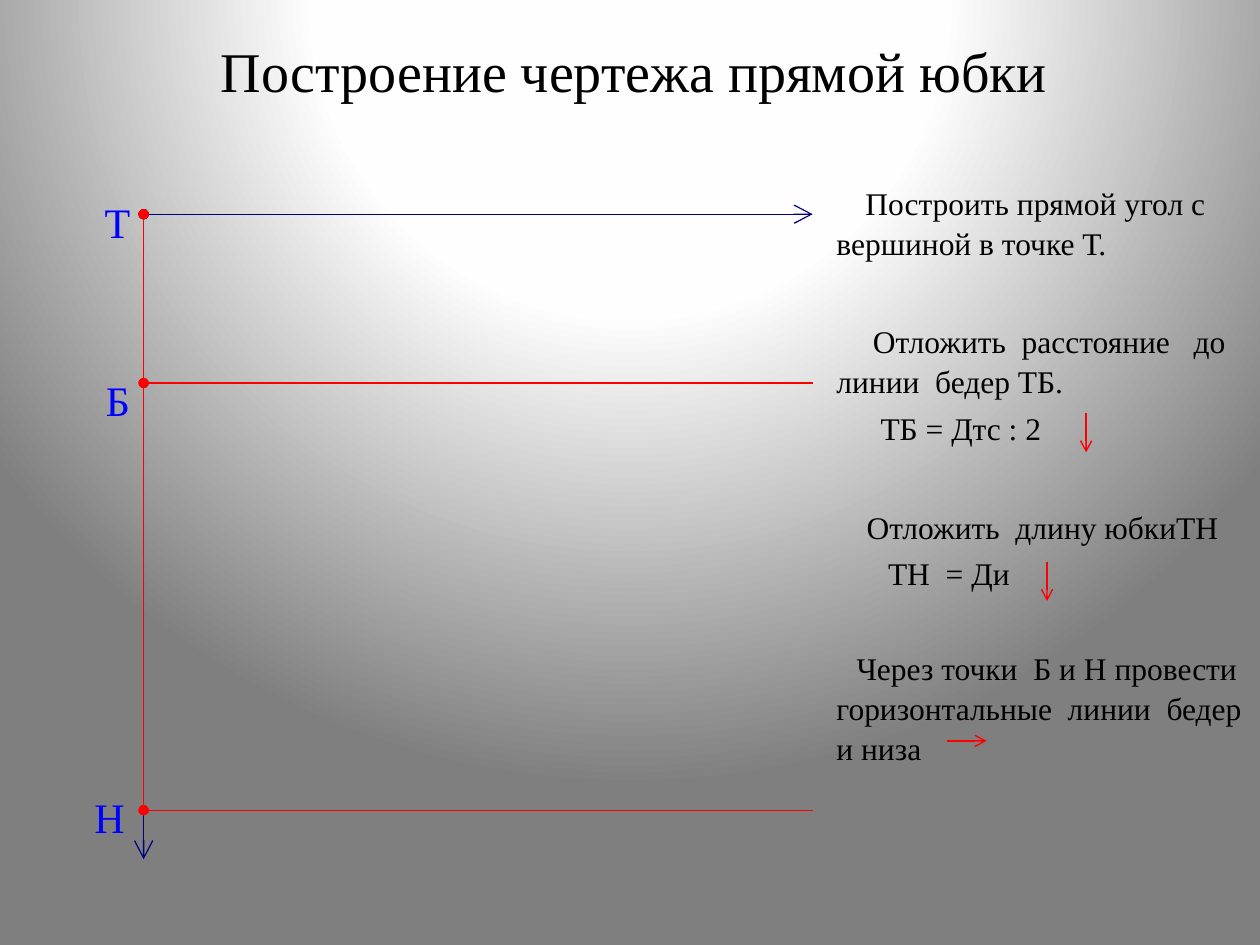
from lxml import etree
from pptx import Presentation
from pptx.dml.color import RGBColor
from pptx.enum.shapes import MSO_CONNECTOR
from pptx.enum.text import MSO_ANCHOR, PP_ALIGN
from pptx.oxml.ns import qn
from pptx.util import Inches, Pt

STRAIGHT = MSO_CONNECTOR.STRAIGHT
MIDDLE, TOP = MSO_ANCHOR.MIDDLE, MSO_ANCHOR.TOP
CENTER, LEFT = PP_ALIGN.CENTER, PP_ALIGN.LEFT

FONT = "Times New Roman"
BLACK, BLUE, NAVY, RED = "000000", "0000FF", "000080", "FF0000"
SLIDE_WIDTH, SLIDE_HEIGHT = Inches(10), Inches(7.5)
COLUMNS, ROWS = 100, 75

AXIS, RIGHT_END = 11.4, 64.5
WAIST, HIPS, HEM, AXIS_END = 17, 30.4, 64.3, 68.2
STEPS_LEFT = 63.4
ARROW_LENGTH = 3.1

FIRST_STEP = [("Построить прямой угол с вершиной в точке Т.", 0.23, 0)]
NEXT_STEPS = [
    ("Отложить  расстояние   до линии  бедер ТБ.", 0.29, 0),
    ("ТБ = Дтс : 2", 0.35, 3.6),
    ("Отложить  длину юбкиТН", 0.24, 34),
    ("ТН  = Ди", 0.41, 3.6),
    ("Через точки  Б и Н провести горизонтальные  линии  бедер и низа", 0.16, 31),
]


def column(count):
    return round(SLIDE_WIDTH * count / COLUMNS)


def row(count):
    return round(SLIDE_HEIGHT * count / ROWS)


def color(value):
    return RGBColor.from_string(value)


def paint_background(slide):
    fill = slide.background.fill
    fill.gradient()
    gradient = next(slide.element.iter(qn("a:gradFill")))
    for child in list(gradient):
        gradient.remove(child)
    stops = etree.SubElement(gradient, qn("a:gsLst"))
    for position, value in ((0, "FFFFFF"), (40, "FEFEFE"), (100, "7F7F7F")):
        stop = etree.SubElement(stops, qn("a:gs"), pos=str(position * 1000))
        etree.SubElement(stop, qn("a:srgbClr"), val=value)
    circle = etree.SubElement(gradient, qn("a:path"), {"path": "circle"})
    etree.SubElement(circle, qn("a:fillToRect"),
                     l="50000", t="-80000", r="50000", b="180000")


def add_text_box(slide, left, top, width, height, anchor=TOP, wrap=True):
    shape = slide.shapes.add_textbox(column(left), row(top), column(width), row(height))
    frame = shape.text_frame
    frame.word_wrap = wrap
    frame.vertical_anchor = anchor
    return frame


def add_run(paragraph, text, size, value, alignment=LEFT):
    paragraph.alignment = alignment
    run = paragraph.add_run()
    run.text = text
    run.font.name = FONT
    run.font.size = Pt(size)
    run.font.color.rgb = color(value)


def add_title(slide, text):
    frame = add_text_box(slide, 13, 0, 74.7, 11.1, MIDDLE)
    add_run(frame.paragraphs[0], text, 32, BLACK, CENTER)


def add_steps(slide, steps, top, width, height):
    frame = add_text_box(slide, STEPS_LEFT, top, width, height)
    for index, (text, indent, space) in enumerate(steps):
        paragraph = frame.paragraphs[0] if index == 0 else frame.add_paragraph()
        paragraph.space_before = Pt(space)
        paragraph.line_spacing = 1.06
        properties = paragraph._p.get_or_add_pPr()
        properties.set("marL", str(Inches(0.2)))
        properties.set("indent", str(Inches(indent)))
        add_run(paragraph, text, 18, BLACK)


def add_point_label(slide, text, left, top, width):
    frame = add_text_box(slide, left, top, width, 3.8, wrap=False)
    frame.margin_left = frame.margin_right = frame.margin_bottom = 0
    frame.margin_top = Inches(0.09)
    add_run(frame.paragraphs[0], text, 24, BLUE, CENTER)


def add_line(slide, start, end, value, head=None, tail=None, size="med", weight=0.75):
    connector = slide.shapes.add_connector(
        STRAIGHT, column(start[0]), row(start[1]), column(end[0]), row(end[1]))
    connector.line.color.rgb = color(value)
    connector.line.width = Pt(weight)
    outline = connector.line._get_or_add_ln()
    if head:
        etree.SubElement(outline, qn("a:headEnd"), type=head)
    if tail:
        etree.SubElement(outline, qn("a:tailEnd"), type=tail, w=size, len=size)
    etree.SubElement(connector._element.spPr, qn("a:effectLst"))


def add_step_arrow(slide, left, top, across=0, down=0):
    add_line(slide, (left, top), (left + across, top + down), RED,
             tail="arrow", weight=0.79)


def main():
    presentation = Presentation()
    presentation.slide_width, presentation.slide_height = SLIDE_WIDTH, SLIDE_HEIGHT
    slide = presentation.slides.add_slide(presentation.slide_layouts[6])
    paint_background(slide)
    add_title(slide, "Построение чертежа прямой юбки")
    add_steps(slide, NEXT_STEPS, 24.9, 36.6, 46.9)

    corner = (AXIS, WAIST)
    for end in ((AXIS, AXIS_END), (RIGHT_END, WAIST)):
        add_line(slide, corner, end, NAVY, "oval", "arrow", "lg")
    for level in (HIPS, HEM):
        add_line(slide, corner, (AXIS, level), RED, "oval", "oval")
        add_line(slide, (AXIS, level), (RIGHT_END, level), RED, "oval")
    for label in (("Т", 8.3, 14.7, 2), ("Б", 8.3, 28.8, 2.1), ("Н", 7.5, 61.9, 2.4)):
        add_point_label(slide, *label)

    add_steps(slide, FIRST_STEP, 13.9, 39.4, 7.1)
    add_step_arrow(slide, 86.2, 32.8, down=ARROW_LENGTH)
    add_step_arrow(slide, 83.1, 44.6, down=ARROW_LENGTH)
    add_step_arrow(slide, 75.2, 58.8, across=ARROW_LENGTH)
    presentation.save("out.pptx")


if __name__ == "__main__":
    main()
